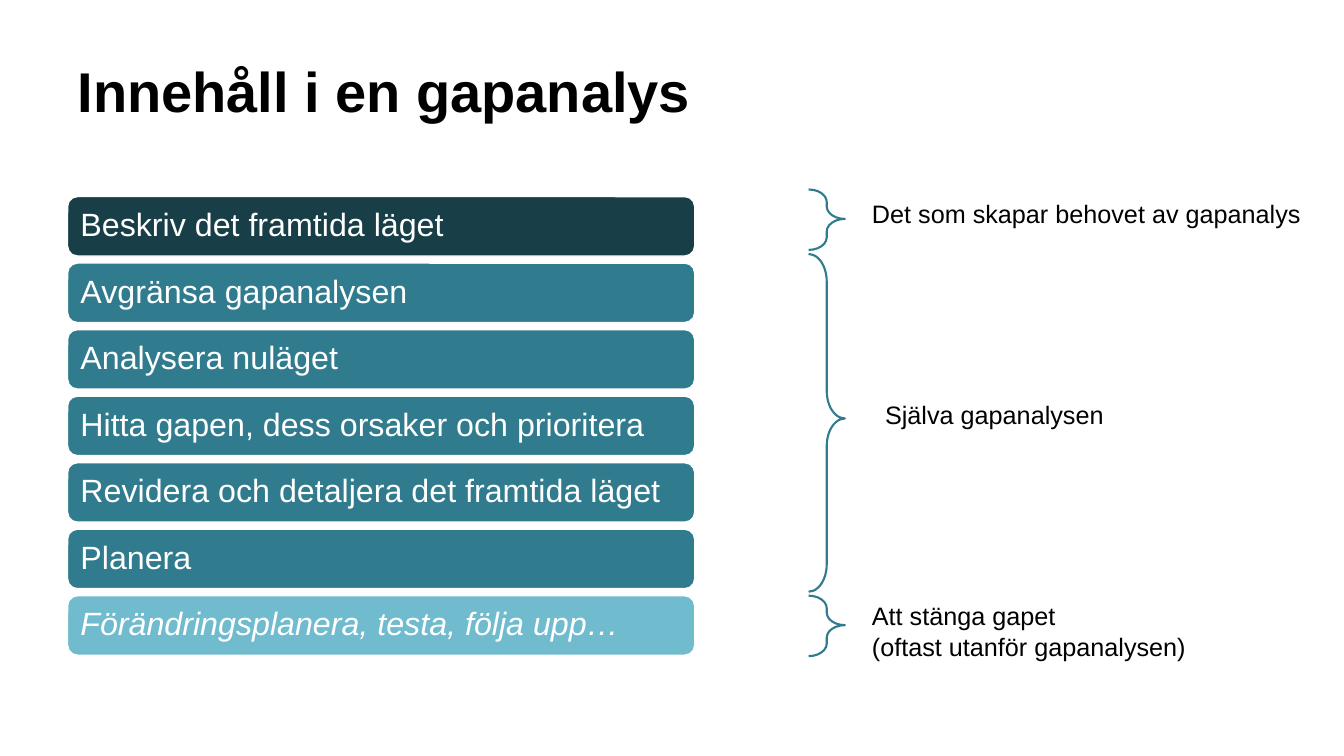
"""Build the slide on the contents of a gap analysis."""
from pptx import Presentation
from pptx.dml.color import RGBColor
from pptx.enum.shapes import MSO_SHAPE
from pptx.enum.text import MSO_ANCHOR, PP_ALIGN
from pptx.util import Inches, Pt

BLACK = RGBColor(0x00, 0x00, 0x00)
WHITE = RGBColor(0xFF, 0xFF, 0xFF)
DARK_TEAL = RGBColor(0x18, 0x3E, 0x47)
TEAL = RGBColor(0x30, 0x7C, 0x8E)
LIGHT_TEAL = RGBColor(0x70, 0xBC, 0xCE)

LEFT = 0.67
STEP_TOP, STEP_PITCH = 1.95, 0.66
STEPS = [
    ("Beskriv det framtida läget", DARK_TEAL),
    ("Avgränsa gapanalysen", TEAL),
    ("Analysera nuläget", TEAL),
    ("Hitta gapen, dess orsaker och prioritera", TEAL),
    ("Revidera och detaljera det framtida läget", TEAL),
    ("Planera", TEAL),
    ("Förändringsplanera, testa, följa upp…", LIGHT_TEAL),
]
PHASES = [
    (1.88, 0.6, 0.347, "Det som skapar behovet av gapanalys", (8.55, 1.92, 4.49, 0.4)),
    (2.52, 3.35, 0.761, "Själva gapanalysen", (8.68, 3.91, 2.39, 0.4)),
    (5.91, 0.6, 0.347, "Att stänga gapet\n(oftast utanför gapanalysen)", (8.55, 5.91, 3.34, 0.71)),
]


def write(frame, text, size=18, color=BLACK, bold=False, italic=False,
          spacing=1.0, anchor=MSO_ANCHOR.TOP, wrap=True):
    frame.word_wrap = wrap
    frame.vertical_anchor = anchor
    paragraph = frame.paragraphs[0]
    paragraph.text = text
    paragraph.alignment = PP_ALIGN.LEFT
    paragraph.line_spacing = spacing
    for run in paragraph.runs:
        font = run.font
        font.name, font.size, font.bold, font.italic = "Arial", Pt(size), bold, italic
        font.color.rgb = color


class GapSlide:
    def __init__(self, deck):
        self.slide = deck.slides.add_slide(deck.slide_layouts[5])
        self.shapes = self.slide.shapes

    def title(self, text):
        heading = self.shapes.title
        heading.left, heading.top = Inches(LEFT), Inches(0.39)
        heading.width, heading.height = Inches(12), Inches(1.25)
        heading.text_frame.margin_top = Inches(0.1)
        write(heading.text_frame, text, size=40, bold=True, spacing=1.1)

    def step(self, text, top, color, italic):
        bar = self.shapes.add_shape(MSO_SHAPE.ROUNDED_RECTANGLE, Inches(LEFT),
                                    Inches(top), Inches(6.22), Inches(0.59))
        bar.shadow.inherit = False
        bar.fill.solid()
        bar.fill.fore_color.rgb = color
        bar.line.color.rgb = WHITE
        bar.line.width = Pt(1)
        write(bar.text_frame, text, size=23, color=WHITE, italic=italic,
              spacing=0.9, anchor=MSO_ANCHOR.MIDDLE)

    def brace(self, top, height, curl):
        brace = self.shapes.add_shape(MSO_SHAPE.RIGHT_BRACE, Inches(8.02),
                                      Inches(top), Inches(0.36), Inches(height))
        brace.shadow.inherit = False
        brace.fill.background()
        brace.line.color.rgb = TEAL
        brace.line.width = Pt(1.5)
        brace.adjustments[0] = curl
        brace.adjustments[1] = 0.487

    def label(self, text, place):
        label = self.shapes.add_textbox(*map(Inches, place))
        write(label.text_frame, text, wrap=False)


def main():
    deck = Presentation()
    deck.slide_width, deck.slide_height = Inches(13.33), Inches(7.5)
    page = GapSlide(deck)
    page.title("Innehåll i en gapanalys")
    for row, (step, color) in enumerate(STEPS):
        page.step(step, STEP_TOP + row * STEP_PITCH, color, italic=color == LIGHT_TEAL)
    for top, height, curl, phase, place in PHASES:
        page.brace(top, height, curl)
        page.label(phase, place)
    deck.save("out.pptx")


if __name__ == "__main__":
    main()
